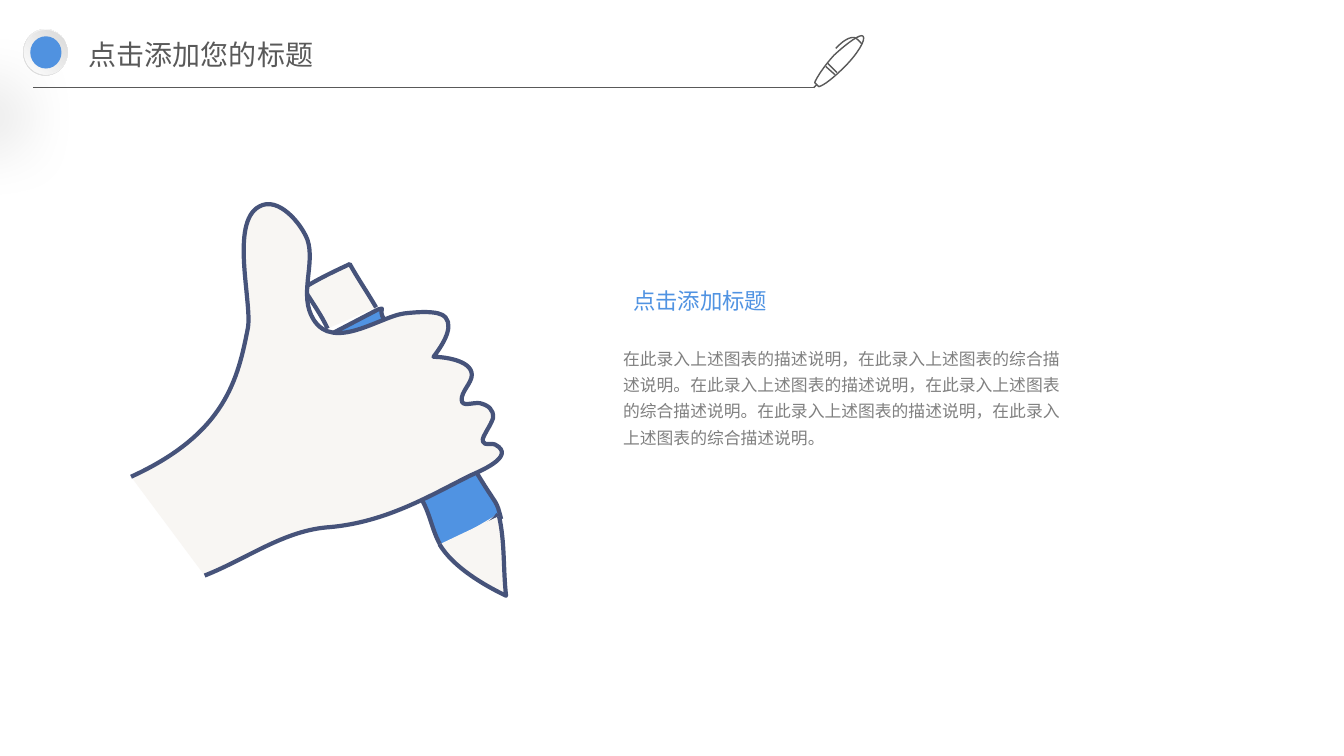
from lxml import etree
from pptx import Presentation
from pptx.dml.color import RGBColor
from pptx.enum.shapes import MSO_CONNECTOR as CONN, MSO_SHAPE as SHAPE
from pptx.enum.text import MSO_ANCHOR as ANCHOR, MSO_AUTO_SIZE as AUTO, PP_ALIGN as ALIGN
from pptx.oxml import parse_xml
from pptx.oxml.ns import nsdecls, qn
from pptx.util import Inches, Pt

BLUE = RGBColor(0x50, 0x93, 0xE2)
DOT = RGBColor(0x50, 0x92, 0xE0)
NAVY = RGBColor(0x46, 0x53, 0x7A)
PAPER = RGBColor(0xF8, 0xF6, 0xF3)
DARK = RGBColor(0x59, 0x59, 0x59)
GREY = RGBColor(0x80, 0x80, 0x80)
SILVER = RGBColor(0xD9, 0xD9, 0xD9)
WHITE = RGBColor(0xFF, 0xFF, 0xFF)
PEARL = RGBColor(0xFE, 0xFE, 0xFE)

PENCIL_BODY = [[
    (4.97, 5.15), (4.92, 4.95, 4.94, 5.04, 4.74, 4.71), (4.55, 4.38, 3.98, 3.44, 3.81, 3.17),
    (3.74, 3.06, 3.84, 3.05, 3.75, 3.07), (3.29, 3.31), (3.4, 3.48),
    (3.55, 3.77, 4.03, 4.67, 4.18, 4.95), (4.28, 5.13, 4.28, 5.26, 4.38, 5.43)]]
PENCIL_SEAM = [[(4.94, 5.1), (4.9, 5.2, 4.53, 5.39, 4.38, 5.43)]]
PENCIL_END = [[
    (3.73, 3.05), (3.65, 2.91, 3.54, 2.75, 3.47, 2.62), (3.32, 2.69, 3.15, 2.77, 3.01, 2.86),
    (3.09, 2.99, 3.19, 3.13, 3.25, 3.26)]]
PENCIL_TIP = [[
    (4.36, 5.4), (4.49, 5.62, 4.79, 5.8, 5.02, 5.91), (4.99, 5.65, 5.01, 5.38, 4.95, 5.12)]]
HAND = [[
    (1.3, 4.73), (2.24, 4.3, 2.36, 3.76, 2.46, 3.25), (2.5, 2.99, 2.28, 2.21, 2.57, 2.05),
    (2.76, 1.94, 2.99, 2.22, 3.05, 2.38), (3.13, 2.62, 2.96, 2.93, 3.11, 3.17),
    (3.31, 3.49, 3.77, 3.14, 4.01, 3.11), (4.1, 3.1, 4.36, 3.07, 4.42, 3.15),
    (4.51, 3.26, 4.36, 3.46, 4.3, 3.54), (4.39, 3.54, 4.68, 3.57, 4.68, 3.72),
    (4.68, 3.8, 4.57, 3.89, 4.58, 3.97), (4.58, 4.04, 4.69, 3.99, 4.76, 4),
    (4.84, 4.02, 4.9, 4.06, 4.89, 4.15), (4.88, 4.18, 4.86, 4.22, 4.83, 4.27),
    (4.81, 4.31, 4.78, 4.35, 4.79, 4.38), (4.81, 4.43, 4.88, 4.39, 4.91, 4.41),
    (5.14, 4.53, 4.72, 4.69, 4.66, 4.72), (4.26, 4.92, 3.83, 5.18, 3.27, 5.23),
    (2.82, 5.26, 2.46, 5.54, 2.03, 5.71)]]
PEN = [
    [(8.28, 0.74), (8.19, 0.66)],
    [(8.21, 0.63), (8.3, 0.72)],
    [(8.56, 0.36), (8.54, 0.33, 8.41, 0.42, 8.27, 0.55), (8.17, 0.66, 8.1, 0.77, 8.08, 0.82),
     (8.12, 0.86), (8.17, 0.85, 8.27, 0.77, 8.38, 0.66), (8.51, 0.53, 8.59, 0.39, 8.56, 0.36)],
    [(8.1, 0.84), (8.07, 0.87)],
    [(8.55, 0.44), (8.55, 0.44, 8.52, 0.4, 8.49, 0.38), (8.49, 0.38, 8.43, 0.33, 8.29, 0.48)],
]


class SlideBuilder:
    def __init__(self, slide):
        self.shapes = slide.shapes

    def group(self):
        return self.shapes.add_group_shape().shapes

    def outline(self, shapes, contours, color, width, fill=None):
        first = contours[0][0]
        builder = shapes.build_freeform(Inches(first[0]), Inches(first[1]), scale=1.0)
        for i, (start, *steps) in enumerate(contours):
            if i:
                builder.move_to(Inches(start[0]), Inches(start[1]))
            for step in steps:
                pairs = zip(step[::2], step[1::2])
                builder.add_line_segments([(Inches(x), Inches(y)) for x, y in pairs], close=False)
        sp = builder.convert_to_shape()
        lines = iter(list(sp._element.iter(qn("a:lnTo"))))
        for step in (step for contour in contours for step in contour[1:]):
            segment = next(lines)
            if len(step) == 6:
                segment.addprevious(curve := etree.Element(qn("a:cubicBezTo")))
                for part in (segment, next(lines), next(lines)):
                    curve.append(part[0])
                    part.getparent().remove(part)
        sp.shadow.inherit = False
        if fill is None:
            sp.fill.background()
        else:
            sp.fill.solid()
            sp.fill.fore_color.rgb = fill
        sp.line.color.rgb = color
        sp.line.width = Pt(width)

    def disc(self, shapes, box, *colors):
        sp = shapes.add_shape(SHAPE.OVAL, *map(Inches, box))
        sp.shadow.inherit = False
        sp.line.fill.background()
        if len(colors) == 1:
            sp.fill.solid()
            sp.fill.fore_color.rgb = colors[0]
            return sp
        sp.fill.gradient()
        for stop, color in zip(sp.fill.gradient_stops, colors):
            stop.color.rgb = color
        linear = sp._element.spPr.find(".//" + qn("a:lin"))
        linear.getparent().replace(linear, parse_xml(
            f'<a:path {nsdecls("a")} path="circle">'
            '<a:fillToRect l="100000" t="0" r="0" b="100000"/></a:path>'))
        return sp

    def drop_shadow(self, sp, blur, distance, angle, alpha):
        effects = sp._element.spPr.find(qn("a:effectLst"))
        effects.append(parse_xml(
            f'<a:outerShdw {nsdecls("a")} blurRad="{Pt(blur)}" dist="{Pt(distance)}" '
            f'dir="{angle * 60000}" algn="ctr" rotWithShape="0"><a:srgbClr val="000000">'
            f'<a:alpha val="{alpha * 1000}"/></a:srgbClr></a:outerShdw>'))

    def rule(self, x1, x2, y, color, width):
        line = self.shapes.add_connector(CONN.STRAIGHT, *map(Inches, (x1, y, x2, y)))
        line.line.color.rgb = color
        line.line.width = Pt(width)
        etree.SubElement(line._element.spPr, qn("a:effectLst"))

    def text(self, box, text, size, font, color, margins, wrap=True,
             align=ALIGN.LEFT, anchor=ANCHOR.TOP, spacing=1.0):
        tf = self.shapes.add_textbox(*map(Inches, box)).text_frame
        tf.word_wrap = wrap
        tf.auto_size = AUTO.SHAPE_TO_FIT_TEXT
        tf.vertical_anchor = anchor
        tf.margin_left = tf.margin_right = Inches(margins[0])
        tf.margin_top = tf.margin_bottom = Inches(margins[1])
        tf.text = text
        p = tf.paragraphs[0]
        p.alignment = align
        p.line_spacing = spacing
        r = p.runs[0]
        r.font.size = Pt(size)
        r.font.name = font
        r.font.color.rgb = color
        etree.SubElement(r.font._element, qn("a:ea")).set("typeface", font)


def main():
    prs = Presentation()
    prs.slide_width, prs.slide_height = Inches(13.33), Inches(7.5)
    b = SlideBuilder(prs.slides.add_slide(prs.slide_layouts[6]))

    thumb_up = b.group()
    for contours, fill in ((PENCIL_BODY, BLUE), (PENCIL_SEAM, PAPER), (PENCIL_END, PAPER),
                           (PENCIL_TIP, PAPER), (HAND, PAPER)):
        b.outline(thumb_up, contours, NAVY, 3, fill)

    b.text((6.14, 3.36, 4.51, 1.12),
           "在此录入上述图表的描述说明，在此录入上述图表的综合描述说明。"
           "在此录入上述图表的描述说明，在此录入上述图表的综合描述说明。"
           "在此录入上述图表的描述说明，在此录入上述图表的综合描述说明。",
           12, "Noto Sans CJK SC", GREY, (0.04, 0.04), anchor=ANCHOR.MIDDLE, spacing=1.3)
    b.text((6.18, 2.8, 1.53, 0.37), "点击添加标题", 16, "Calibri", BLUE, (0.1, 0.05),
           wrap=False, align=ALIGN.RIGHT)

    b.rule(0.33, 8.07, 0.87, DARK, 0.5)
    b.outline(b.shapes, PEN, DARK, 1)
    b.text((0.75, 0.3, 2.65, 0.47), "点击添加您的标题", 20, "Noto Sans CJK JP", DARK, (0.13, 0.07))

    badge = b.group()
    rim = b.disc(badge, (0.23, 0.29, 0.44, 0.46), WHITE, SILVER)
    b.drop_shadow(rim, blur=50, distance=60, angle=130, alpha=25)
    b.disc(badge, (0.24, 0.3, 0.43, 0.44), SILVER, PEARL)
    b.disc(badge, (0.3, 0.36, 0.31, 0.32), DOT)

    prs.save("out.pptx")


if __name__ == "__main__":
    main()
